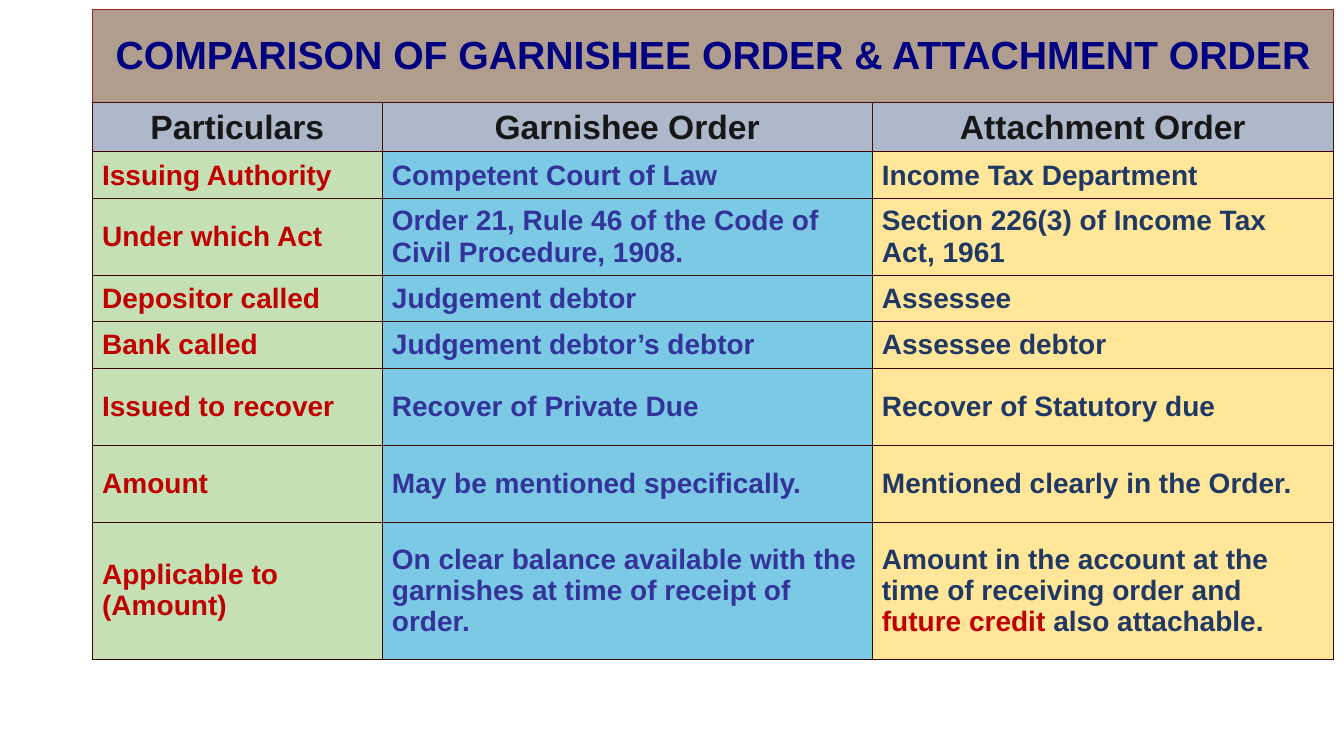
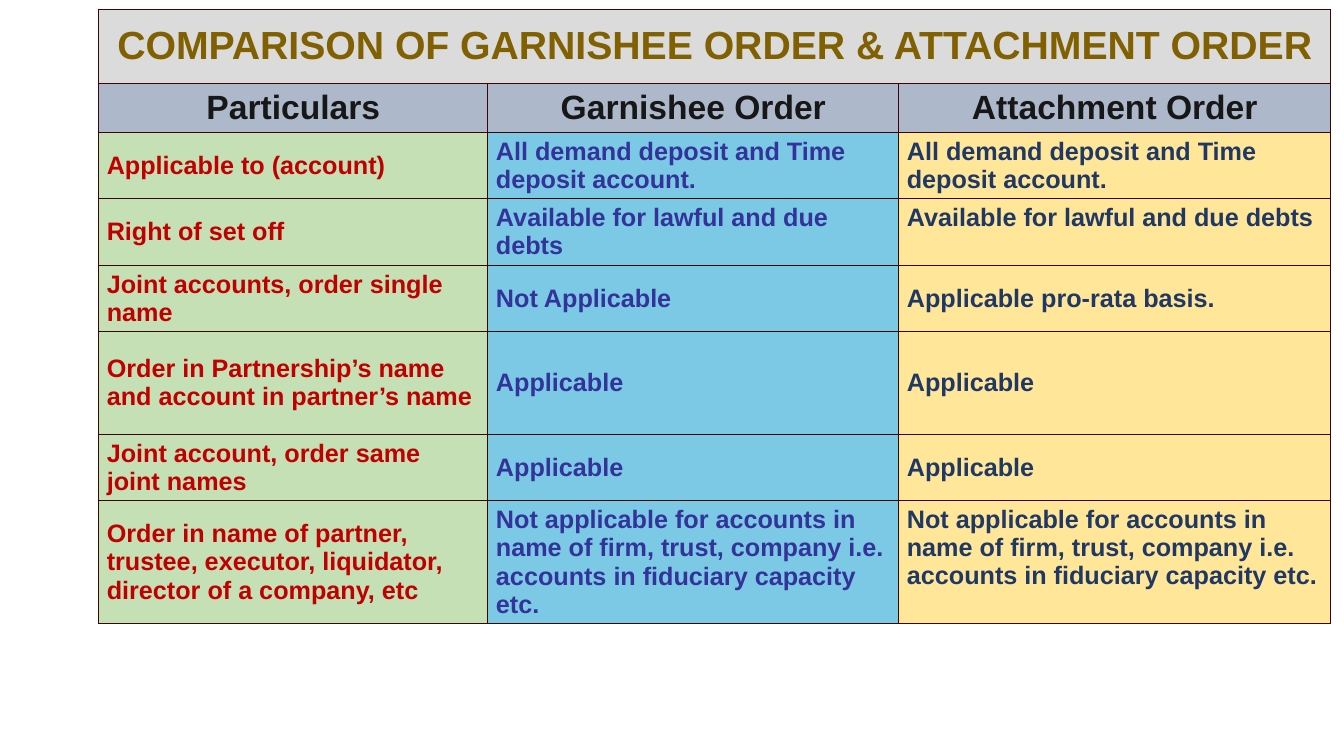
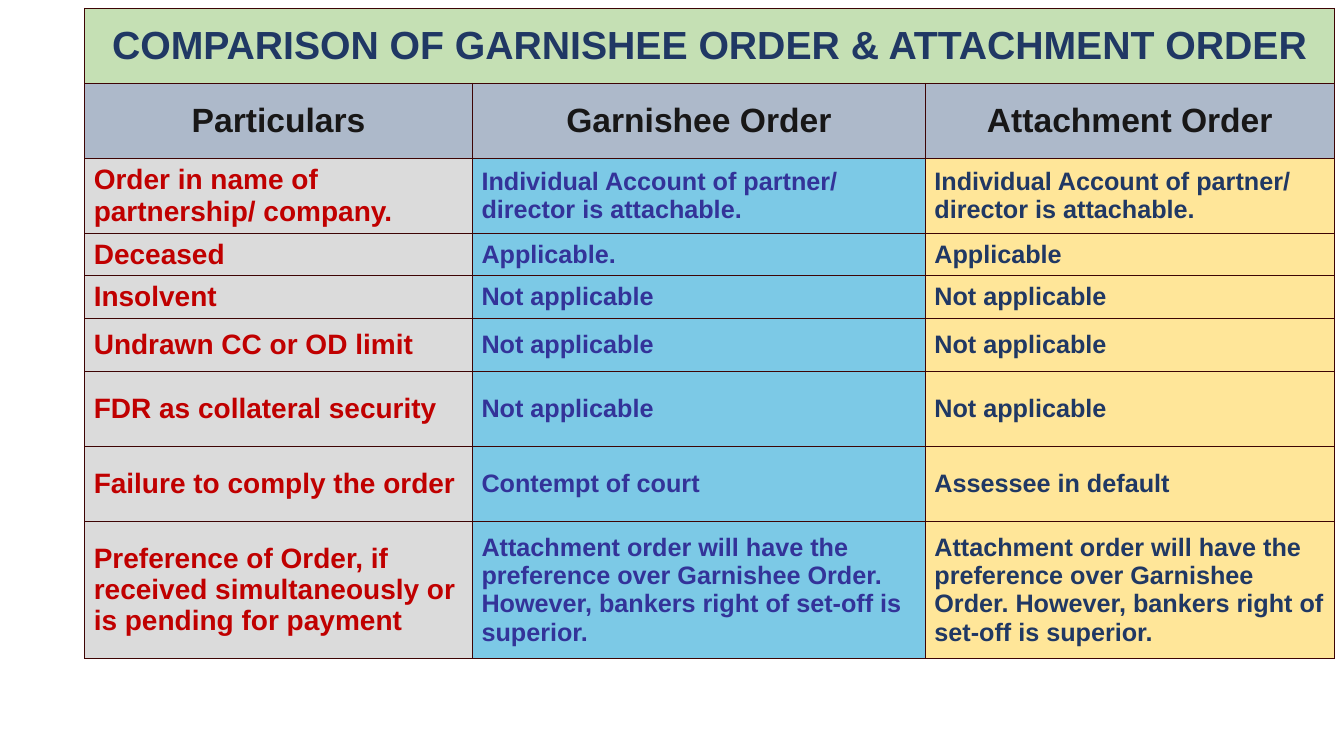
from dataclasses import dataclass

from lxml import etree
from pptx import Presentation
from pptx.dml.color import RGBColor
from pptx.enum import text
from pptx.oxml import ns
from pptx.util import Pt


@dataclass(frozen=True)
class Theme:
    font: str = "Arial"
    title_size: float = 28
    heading_size: float = 24
    large: float = 20
    small: float = 18
    heading_ink: str = "181717"
    heading_fill: str = "ADB9CA"
    column_inks: tuple = ("C00000", "333399", "203864")
    green: str = "C5E0B4"
    grey: str = "DBDBDB"
    taupe: str = "B09D8D"
    blue: str = "7CC9E6"
    yellow: str = "FFE699"
    emphasis: str = "C00000"
    rule: str = "3D0404"
    heading_rule: str = "450C0C"
    title_rule: str = "962626"
    side_width: float = 1
    row_width: float = 0.75


THEME = Theme()
TITLE = "COMPARISON OF GARNISHEE ORDER & ATTACHMENT ORDER"
HEADINGS = ("Particulars", "Garnishee Order", "Attachment Order")
HEADING_INSETS = (7, 4)


@dataclass(frozen=True)
class Comparison:
    """One slide: lengths are in points, insets are (side, top and bottom)."""
    origin: tuple
    columns: tuple
    heights: tuple
    title_ink: str
    title_fill: str
    particulars_fill: str
    sizes: tuple
    insets: tuple
    rows: tuple
    raised: tuple = ()          # entries whose last cell is set at the top
    head_rules: tuple = (THEME.rule, THEME.rule)    # title, headings


# Content: text between asterisks is emphasised
COMPARISONS = (
    Comparison(
        origin=(66, 6.5), columns=(207, 350, 329.5),
        heights=(67, 35, 33.5, 54.5, 33.5, 33, 55, 55, 98),
        title_ink="000080", title_fill=THEME.taupe,
        particulars_fill=THEME.green,
        sizes=(THEME.large,) * 3, insets=(7, 4),
        head_rules=(THEME.title_rule, THEME.heading_rule),
        rows=(
            ("Issuing Authority", "Competent Court of Law",
             "Income Tax Department"),
            ("Under which Act",
             "Order 21, Rule 46 of the Code of Civil Procedure, 1908.",
             "Section 226(3) of Income Tax Act, 1961"),
            ("Depositor called", "Judgement debtor", "Assessee"),
            ("Bank called", "Judgement debtor’s debtor", "Assessee debtor"),
            ("Issued to recover", "Recover of Private Due",
             "Recover of Statutory due"),
            ("Amount", "May be mentioned specifically.",
             "Mentioned clearly in the Order."),
            ("Applicable to (Amount)",
             "On clear balance available with the garnishes at time of "
             "receipt of order.",
             "Amount in the account at the time of receiving order and "
             "*future credit *also attachable."),
        )),
    Comparison(
        origin=(70.5, 6.5), columns=(278, 293.5, 308.5),
        heights=(53, 35, 47.5, 47.5, 47.5, 73, 47.5, 88),
        title_ink="806000", title_fill=THEME.grey,
        particulars_fill=THEME.green,
        sizes=(THEME.small,) * 3, insets=(5.8, 3.6), raised=(1, 5),
        rows=(
            ("Applicable to (account)",)
            + ("All demand deposit and Time deposit account.",) * 2,
            ("Right of set off",)
            + ("Available for lawful and due debts",) * 2,
            ("Joint accounts, order single name", "Not Applicable",
             "Applicable pro-rata basis."),
            ("Order in Partnership’s name and account in partner’s name",
             "Applicable", "Applicable"),
            ("Joint account, order same joint names",
             "Applicable", "Applicable"),
            ("Order in name of partner, trustee, executor, liquidator, "
             "director of a company, etc",)
            + ("Not applicable for accounts in name of firm, trust, company "
               "i.e. accounts in fiduciary capacity etc.",) * 2,
        )),
    Comparison(
        origin=(60.5, 6), columns=(277, 323.5, 292),
        heights=(53.5, 53.5, 53.5, 30.5, 30.5, 38, 53.5, 53.5, 98),
        title_ink="203864", title_fill=THEME.green,
        particulars_fill=THEME.grey,
        sizes=(THEME.large, THEME.small, THEME.small), insets=(6.5, 4),
        rows=(
            ("Order in name of partnership/ company.",)
            + ("Individual Account of partner/ director is attachable.",) * 2,
            ("Deceased", "Applicable.", "Applicable"),
            ("Insolvent", "Not applicable", "Not applicable"),
            ("Undrawn CC or OD limit", "Not applicable", "Not applicable"),
            ("FDR as collateral security", "Not applicable",
             "Not applicable"),
            ("Failure to comply the order", "Contempt of court",
             "Assessee in default"),
            ("Preference of Order, if received simultaneously or is pending "
             "for payment",)
            + ("Attachment order will have the preference over Garnishee "
               "Order. However, bankers right of set-off is superior.",) * 2,
        )),
)


def rule_cell(cell, colour, below=None, below_width=THEME.row_width):
    """Draw the four borders; they come first among the cell properties."""
    sides = (("lnL", colour, THEME.side_width),
             ("lnR", colour, THEME.side_width),
             ("lnT", colour, THEME.row_width),
             ("lnB", below or colour, below_width))
    properties = cell._tc.get_or_add_tcPr()
    for place, (tag, ink, width) in enumerate(sides):
        border = etree.Element(ns.qn(f"a:{tag}"), w=str(Pt(width)))
        fill = etree.SubElement(border, ns.qn("a:solidFill"))
        etree.SubElement(fill, ns.qn("a:srgbClr"), val=ink)
        properties.insert(place, border)


def fill_cell(cell, words, size, ink, fill, insets, centred=False,
              raised=False):
    """Write one cell's text on its background."""
    cell.fill.solid()
    cell.fill.fore_color.rgb = RGBColor.from_string(fill)
    cell.margin_left = cell.margin_right = Pt(insets[0])
    cell.margin_top = cell.margin_bottom = Pt(insets[1])
    cell.vertical_anchor = (text.MSO_ANCHOR.TOP if raised
                            else text.MSO_ANCHOR.MIDDLE)
    line = cell.text_frame.paragraphs[0]
    line.alignment = text.PP_ALIGN.CENTER if centred else text.PP_ALIGN.LEFT
    line.font.name = THEME.font
    line.font.size = Pt(size)
    line.font.bold = True
    line.font.color.rgb = RGBColor.from_string(ink)
    for number, part in enumerate(words.split("*")):
        run = line.add_run()
        run.text = part
        if number % 2:
            run.font.color.rgb = RGBColor.from_string(THEME.emphasis)


def add_head(table, comparison):
    """Fill the title row and the column headings."""
    title_rule, heading_rule = comparison.head_rules
    title = table.cell(0, 0)
    title.merge(table.cell(0, len(HEADINGS) - 1))
    fill_cell(title, TITLE, THEME.title_size, comparison.title_ink,
              comparison.title_fill, HEADING_INSETS, centred=True)
    for column, heading in enumerate(HEADINGS):
        rule_cell(table.cell(0, column), title_rule, heading_rule)
        cell = table.cell(1, column)
        fill_cell(cell, heading, THEME.heading_size, THEME.heading_ink,
                  THEME.heading_fill, HEADING_INSETS, centred=True)
        rule_cell(cell, heading_rule, THEME.rule)


def add_entries(table, comparison):
    """Fill the compared points, one a row."""
    fills = (comparison.particulars_fill, THEME.blue, THEME.yellow)
    last_entry = len(comparison.rows) - 1
    for entry, row in enumerate(comparison.rows):
        below = THEME.side_width if entry == last_entry else THEME.row_width
        for column, words in enumerate(row):
            cell = table.cell(entry + 2, column)
            fill_cell(cell, words, comparison.sizes[column],
                      THEME.column_inks[column], fills[column],
                      comparison.insets,
                      raised=column == 2 and entry in comparison.raised)
            rule_cell(cell, THEME.rule, below_width=below)


def add_comparison(deck, comparison):
    """Add a slide holding one comparison table."""
    slide = deck.slides.add_slide(deck.slide_layouts[6])
    left, top = comparison.origin
    table = slide.shapes.add_table(
        len(comparison.heights), len(comparison.columns), Pt(left), Pt(top),
        Pt(sum(comparison.columns)), Pt(sum(comparison.heights))).table
    table.first_row = table.horz_banding = False
    for column, width in zip(table.columns, comparison.columns):
        column.width = Pt(width)
    for row, height in zip(table.rows, comparison.heights):
        row.height = Pt(height)
    add_head(table, comparison)
    add_entries(table, comparison)


def main():
    deck = Presentation()
    deck.slide_width, deck.slide_height = Pt(960), Pt(540)
    for comparison in COMPARISONS:
        add_comparison(deck, comparison)
    deck.save("out.pptx")


if __name__ == "__main__":
    main()
